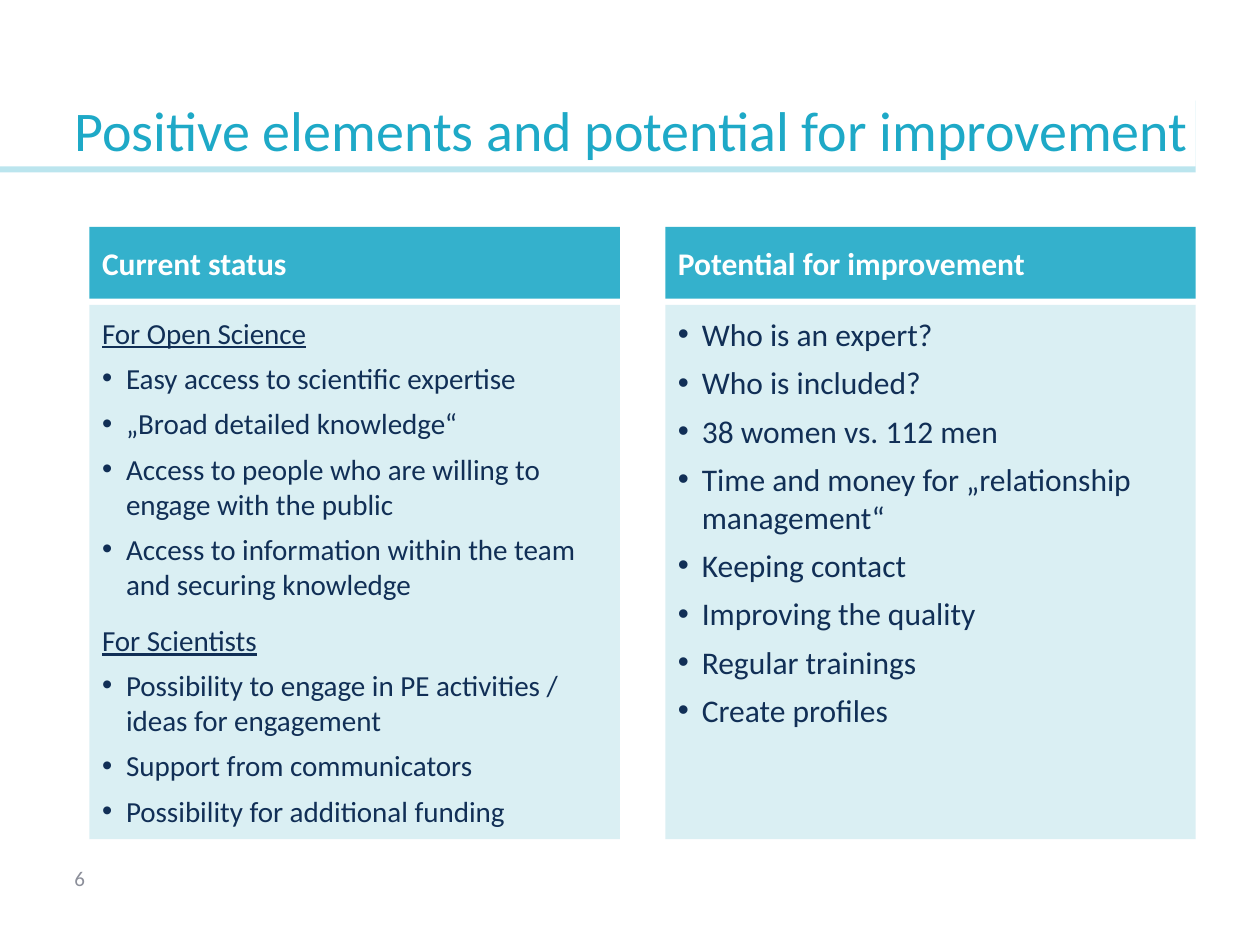
from lxml import etree
from pptx import Presentation, util as u
from pptx.dml.color import RGBColor
from pptx.enum import shapes, text
from pptx.oxml.ns import qn

TITLE = "Positive elements and potential for improvement"
PAGE = "6"
COLS = [
    ("Current status", 16.6, [
        ("For Open Science", [
            "Easy access to scientific expertise",
            "„Broad detailed knowledge“",
            "Access to people who are willing to engage with the public",
            "Access to information within the team and securing knowledge",
        ]),
        ("For Scientists", [
            "Possibility to engage in PE activities / ideas for engagement",
            "Support from communicators",
            "Possibility for additional funding",
        ]),
    ]),
    ("Potential for improvement", 18, [
        (None, [
            "Who is an expert?",
            "Who is included?",
            "38 women vs. 112 men",
            "Time and money for „relationship management“",
            "Keeping contact",
            "Improving the quality",
            "Regular trainings",
            "Create profiles",
        ]),
    ]),
]
TEAL, PALE, NAVY, GREY, WHITE = "1EA9C7", "D1EBF1", "112F56", "8C8F9A", "FFFFFF"
LEFT, STEP, WIDE = 0.71, 4.57, 4.21
HEAD, BODY = (1.8, 0.57), (2.42, 4.24)
INDENT = u.Inches(0.19)


def paint(fill, color, alpha=100):
    """Give a fill a solid colour, with an opacity in percent."""
    fill.solid()
    fill.fore_color.rgb = RGBColor.from_string(color)
    if alpha < 100:
        node = fill._xPr.find(".//" + qn("a:srgbClr"))
        etree.SubElement(node, qn("a:alpha"), val=str(alpha * 1000))


def place(shape, spot, color, alpha, pads, anchor):
    """Set the place, fill, insets and anchor of a shape."""
    shape.left, shape.top, shape.width, shape.height = map(u.Inches, spot)
    paint(shape.fill, color, alpha)
    shape.line.fill.background()
    frame = shape.text_frame
    frame.word_wrap = True
    frame.auto_size = text.MSO_AUTO_SIZE.NONE
    frame.vertical_anchor = anchor
    (frame.margin_left, frame.margin_top,
     frame.margin_right, frame.margin_bottom) = map(u.Inches, pads)


def write(shape, rows, size, color, bold=False):
    """Fill a shape with (text, space before, bullet, underline) rows."""
    frame = shape.text_frame
    frame.text = "\n".join(row[0] for row in rows)
    for par, (_, space, dot, under) in zip(frame.paragraphs, rows):
        par.alignment = text.PP_ALIGN.LEFT
        props = par._p.get_or_add_pPr()
        props.set("marL", str(INDENT if dot else 0))
        props.set("indent", str(-INDENT if dot else 0))
        if dot:
            etree.SubElement(props, qn("a:buFont"), typeface="Arial")
            etree.SubElement(props, qn("a:buChar"), char="•")
        else:
            etree.SubElement(props, qn("a:buNone"))
        par.space_before = u.Pt(space)
        for run in par.runs:
            font = run.font
            font.name, font.size = "Calibri", u.Pt(size)
            font.bold, font.underline = bold, under
            paint(font.fill, color)


def shade(shape, color, alpha, dist):
    """Cast a hard shadow straight down from a shape."""
    shape.shadow.inherit = False
    effects = shape._element.spPr.find(qn("a:effectLst"))
    cast = etree.SubElement(effects, qn("a:outerShdw"), dist=str(u.Pt(dist)),
                            dir="5400000", algn="t", rotWithShape="0")
    tint = etree.SubElement(cast, qn("a:srgbClr"), val=color)
    etree.SubElement(tint, qn("a:alpha"), val=str(alpha * 1000))


def flatten(groups):
    """Turn titled groups into rows, the first without space before."""
    rows = []
    for name, items in groups:
        if name:
            rows.append((name, 12 if rows else 0, False, True))
        for item in items:
            rows.append((item, 6 if rows else 0, True, False))
    return rows


def main():
    """Build the slide and save it."""
    deck = Presentation()
    deck.slide_width, deck.slide_height = u.Inches(10), u.Inches(7.5)
    slide = deck.slides.add_slide(deck.slide_layouts[4])
    anchor = text.MSO_ANCHOR

    title = slide.shapes.title
    place(title, (0, 0.75, 9.49, 0.57), WHITE, 100, (0.59, 0, 0, 0.03), anchor.BOTTOM)
    write(title, [(TITLE, 0, False, False)], 32, TEAL)
    shade(title, TEAL, 30, 3.5)

    holders = list(slide.placeholders)[1:]
    for i, (name, size, groups) in enumerate(COLS):
        x = LEFT + i * STEP
        head, body = holders[2 * i:2 * i + 2]
        place(head, (x, HEAD[0], WIDE, HEAD[1]), TEAL, 90,
              (0.1, 0.05, 0.1, 0.05), anchor.MIDDLE)
        write(head, [(name, 0, False, False)], 18, WHITE, True)
        place(body, (x, BODY[0], WIDE, BODY[1]), PALE, 80,
              (0.1, 0.08, 0.1, 0.08), anchor.TOP)
        write(body, flatten(groups), size, NAVY)

    page = slide.shapes.add_shape(shapes.MSO_SHAPE.RECTANGLE, 0, 0, 0, 0)
    place(page, (0, 6.82, 0.9, 0.25), WHITE, 100, (0.59, 0.05, 0, 0), anchor.MIDDLE)
    write(page, [(PAGE, 0, False, False)], 12, GREY)
    page.shadow.inherit = False

    deck.save("out.pptx")


if __name__ == "__main__":
    main()
